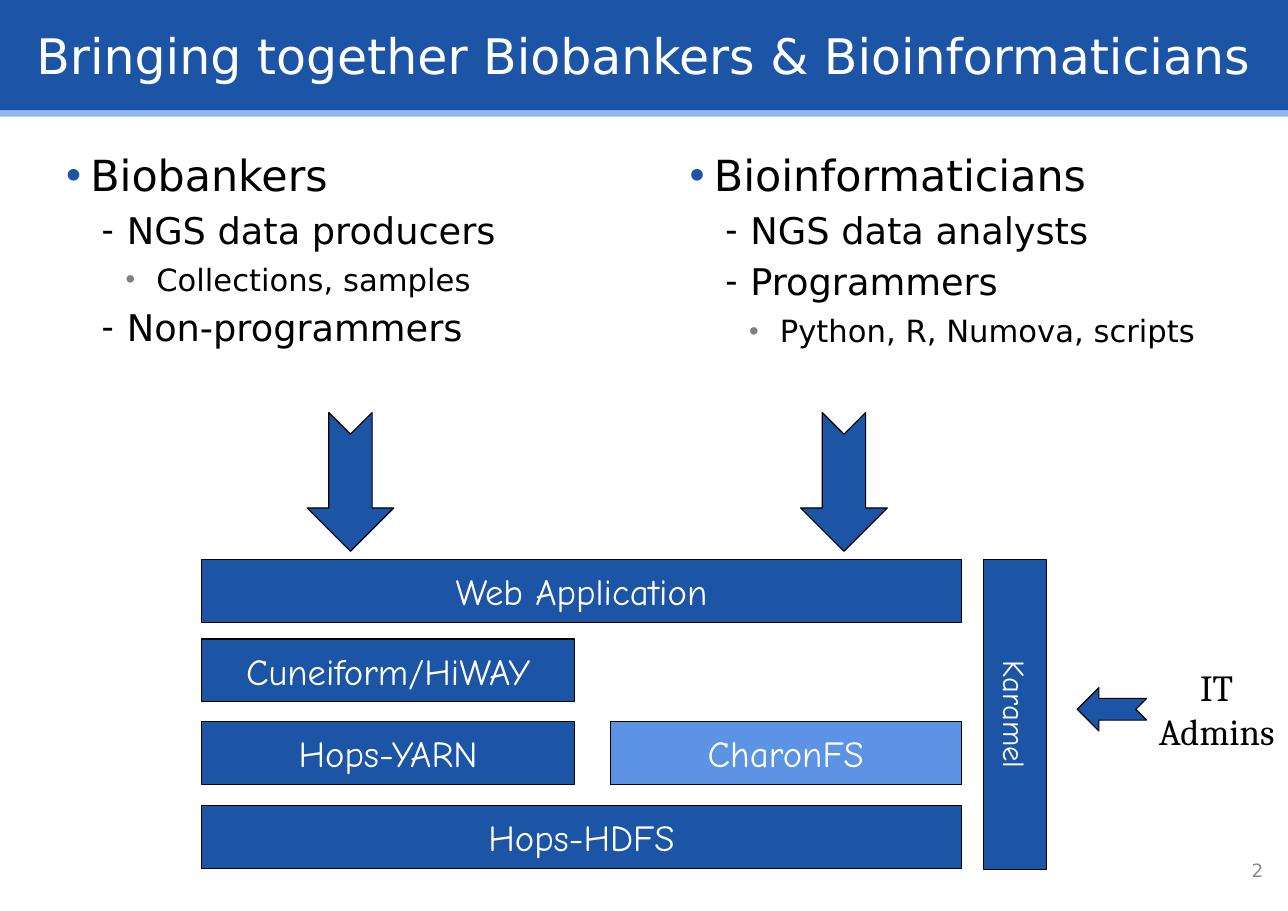
from lxml import etree
from pptx import Presentation
from pptx.dml.color import RGBColor
from pptx.enum import shapes, text
from pptx.oxml import ns
from pptx.util import Cm, Pt

COLORS = {"blue": "1C54A6", "light": "5D93E4", "pale": "93B7ED", "white": "FFFFFF",
          "black": "000000", "bullet": "808080", "number": "8C8C8C"}
SANS, COMIC, SERIF = "DejaVu Sans", "Comic Neue", "Cambria"
RECT = shapes.MSO_SHAPE.RECTANGLE
ARROW = shapes.MSO_SHAPE.NOTCHED_RIGHT_ARROW
CENTER = text.PP_ALIGN.CENTER

# List level: size, left margin, hanging indent, bullet, bullet colour
LEVELS = [(28, 0.56, 0.56, "•", "blue"),
          (24, 1.4, 0.58, "-", "black"),
          (20, 2.08, 0.71, "•", "bullet")]


def rgb(name):
    return RGBColor.from_string(COLORS[name])


def write(p, words, size=24, font=SANS, color="black", align=None):
    """Add one formatted run to a paragraph."""
    r = p.add_run()
    r.text = words
    r.font.size, r.font.name = Pt(size), font
    r.font.color.rgb = rgb(color)
    p.alignment = align


def place(sp, left, top, width, height):
    sp.left, sp.top, sp.width, sp.height = Cm(left), Cm(top), Cm(width), Cm(height)


def add_shape(parent, kind, at, fill="blue", line="black", rotation=0):
    sp = parent.add_shape(kind, *map(Cm, at))
    sp.shadow.inherit = False
    sp.fill.solid()
    sp.fill.fore_color.rgb = rgb(fill)
    if line:
        sp.line.color.rgb = rgb(line)
        sp.line.width = Pt(0.75)
    else:
        sp.line.fill.background()
    sp.rotation = rotation
    return sp


def add_block(parent, words, at, fill="blue", size=24, rotation=0):
    sp = add_shape(parent, RECT, at, fill, rotation=rotation)
    tf = sp.text_frame
    tf.vertical_anchor = text.MSO_ANCHOR.MIDDLE
    write(tf.paragraphs[0], words, size, COMIC, "white", CENTER)


def add_text(s, lines, at, wrap=True, anchor=text.MSO_ANCHOR.TOP, **fmt):
    tf = s.shapes.add_textbox(*map(Cm, at)).text_frame
    tf.word_wrap, tf.vertical_anchor = wrap, anchor
    for i, words in enumerate(lines):
        write(tf.add_paragraph() if i else tf.paragraphs[0], words, **fmt)


def set_bullet(p, left, hang, char, color):
    pPr = p._p.get_or_add_pPr()
    pPr.set("marL", str(Cm(left)))
    pPr.set("indent", str(-Cm(hang)))
    clr = etree.SubElement(pPr, ns.qn("a:buClr"))
    etree.SubElement(clr, ns.qn("a:srgbClr"), val=COLORS[color])
    if color == "bullet":
        etree.SubElement(pPr, ns.qn("a:buSzPct"), val="90000")
    etree.SubElement(pPr, ns.qn("a:buChar"), char=char)


def fill_list(sp, at, items):
    place(sp, *at)
    tf = sp.text_frame
    tf.auto_size = text.MSO_AUTO_SIZE.NONE
    for i, (level, words) in enumerate(items):
        p = tf.add_paragraph() if i else tf.paragraphs[0]
        size, *bullet = LEVELS[level]
        p.level = level
        if level == 2:
            p.space_before = Pt(6)
        set_bullet(p, *bullet)
        write(p, words, size)


def add_title(s, words):
    # The pale bar goes behind the title
    bar = add_shape(s.shapes, RECT, (0, 0, 29.77, 2.69), "pale", None)
    s.shapes._spTree.insert(2, bar._element)
    sp = s.shapes.title
    place(sp, 0, 0, 29.7, 2.54)
    sp.fill.solid()
    sp.fill.fore_color.rgb = rgb("blue")
    tf = sp.text_frame
    tf.auto_size = text.MSO_AUTO_SIZE.NONE
    tf.vertical_anchor = text.MSO_ANCHOR.MIDDLE
    write(tf.paragraphs[0], words, 32, SANS, "white", CENTER)


def add_stack(s):
    left, wide, half, high = 4.65, 17.52, 8.6, 1.45
    right = 14.07
    group = s.shapes.add_group_shape().shapes
    add_block(group, "Hops-HDFS", (left, 18.57, wide, high))
    add_block(group, "Hops-YARN", (left, 16.64, half, high))
    add_block(group, "Web Application", (left, 12.9, wide, high))
    add_block(group, "CharonFS", (right, 16.64, left + wide - right, high), "light")
    add_block(group, "Cuneiform/HiWAY", (left, 14.73, half, high))
    add_block(group, "Karamel", (19.84, 15.75, 7.14, high), size=20, rotation=90)


def main():
    prs = Presentation()
    prs.slide_width, prs.slide_height = Cm(29.7), Cm(21)
    s = prs.slides.add_slide(prs.slide_layouts.get_by_name("Two Content"))
    add_title(s, "Bringing together Biobankers & Bioinformaticians")

    # The two user groups
    fill_list(s.placeholders[1], (1.27, 3.3, 12.78, 14.81),
              [(0, "Biobankers"), (1, "NGS data producers"),
               (2, "Collections, samples"), (1, "Non-programmers")])
    fill_list(s.placeholders[2], (15.65, 3.3, 14.05, 14.81),
              [(0, "Bioinformaticians"), (1, "NGS data analysts"),
               (1, "Programmers"), (2, "Python, R, Numova, scripts")])

    # Arrows from the users to the platform
    for left in (6.48, 17.86):
        add_shape(s.shapes, ARROW, (left, 10.11, 3.2, 2), rotation=90)
    add_text(s, ["IT", "Admins"], (26.44, 15.19, 3.23, 2.31), wrap=False,
             font=SERIF, align=CENTER)
    add_shape(s.shapes, ARROW, (24.84, 15.85, 1.6, 1), rotation=180)

    # Software stack and slide number
    add_stack(s)
    add_text(s, ["2"], (22.45, 19.51, 6.93, 1.12), anchor=text.MSO_ANCHOR.MIDDLE,
             size=12, color="number", align=text.PP_ALIGN.RIGHT)
    prs.save("out.pptx")


if __name__ == "__main__":
    main()
